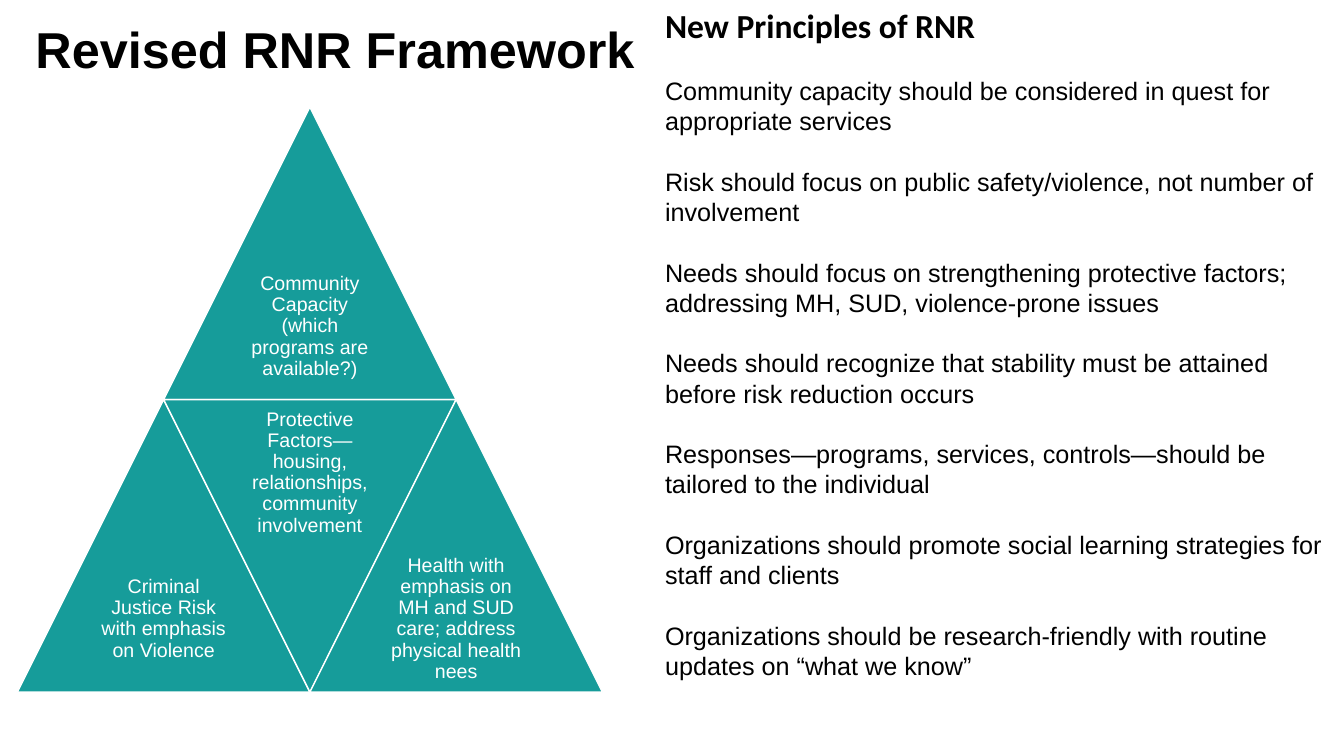
from dataclasses import dataclass

from pptx import Presentation
from pptx.dml.color import RGBColor
from pptx.enum.shapes import MSO_SHAPE
from pptx.enum.text import MSO_ANCHOR, MSO_AUTO_SIZE, PP_ALIGN
from pptx.util import Cm, Pt

TRIANGLE = MSO_SHAPE.ISOSCELES_TRIANGLE
LEFT, CENTER = PP_ALIGN.LEFT, PP_ALIGN.CENTER
TOP, MIDDLE = MSO_ANCHOR.TOP, MSO_ANCHOR.MIDDLE
NO_FIT, GROW = MSO_AUTO_SIZE.NONE, MSO_AUTO_SIZE.SHAPE_TO_FIT_TEXT


@dataclass(frozen=True)
class Theme:
    teal: RGBColor = RGBColor(0x16, 0x9C, 0x9A)
    white: RGBColor = RGBColor(0xFF, 0xFF, 0xFF)
    black: RGBColor = RGBColor(0x00, 0x00, 0x00)
    body_font: str = "Arial"
    heading_font: str = "Calibri"
    title: Pt = Pt(36)
    heading: Pt = Pt(24)
    body: Pt = Pt(18)
    label: Pt = Pt(14)
    principle_gap: Pt = Pt(21.6)


THEME = Theme()

# Column and row in half-side steps, upside down, label
TRIANGLES = [
    (1, 0, False, "Community Capacity (which programs are available?)"),
    (0, 1, False, "Criminal Justice Risk with emphasis on Violence"),
    (1, 1, True, "Protective Factors—housing, relationships, community involvement"),
    (2, 1, False, "Health with emphasis on MH and SUD care; address physical health nees"),
]

PRINCIPLES = [
    "Community capacity should be considered in quest for appropriate services",
    "Risk should focus on public safety/violence, not number of involvement",
    "Needs should focus on strengthening protective factors; addressing MH, SUD, "
    "violence-prone issues",
    "Needs should recognize that stability must be attained before risk reduction occurs",
    "Responses—programs, services, controls—should be tailored to the individual",
    "Organizations should promote social learning strategies for staff and clients",
    "Organizations should be research-friendly with routine updates on “what we know”",
]


def add_run(p, text, size, color, font=THEME.body_font, bold=False):
    r = p.add_run()
    r.text = text
    r.font.name, r.font.size, r.font.bold = font, size, bold
    r.font.color.rgb = color


def add_title(slide, left, top, width, height):
    sp = slide.shapes.title
    sp.left, sp.top, sp.width, sp.height = Cm(left), Cm(top), Cm(width), Cm(height)
    tf = sp.text_frame
    tf.vertical_anchor, tf.auto_size = TOP, NO_FIT
    p = tf.paragraphs[0]
    p.alignment, p.line_spacing = LEFT, 0.9
    add_run(p, "Revised RNR Framework", THEME.title, THEME.black, bold=True)


def add_label(shapes, left, top, size, text):
    tf = shapes.add_textbox(Cm(left), Cm(top), Cm(size), Cm(size)).text_frame
    tf.word_wrap, tf.vertical_anchor = True, MIDDLE
    tf.margin_left = tf.margin_right = tf.margin_top = tf.margin_bottom = Cm(0.15)
    p = tf.paragraphs[0]
    p.alignment, p.line_spacing = CENTER, 0.9
    add_run(p, text, THEME.label, THEME.white)


def add_pyramid(slide, left, top, size):
    """Fill a square box with four triangles, each half as large as the box."""
    shapes = slide.shapes.add_group_shape().shapes
    side = size / 2
    half = side / 2
    for col, row, inverted, text in TRIANGLES:
        x, y = left + col * half, top + row * side
        sp = shapes.add_shape(TRIANGLE, Cm(x), Cm(y), Cm(side), Cm(side))
        sp.rotation = 180 if inverted else 0
        sp.shadow.inherit = False
        sp.fill.solid()
        sp.fill.fore_color.rgb = THEME.teal
        sp.line.color.rgb = THEME.white
        sp.line.width = Pt(1)
        # The label sits in the wide half of its triangle
        add_label(shapes, x + half / 2, y if inverted else y + half, half, text)


def add_principles(slide, left, top, width, height):
    tf = slide.shapes.add_textbox(Cm(left), Cm(top), Cm(width), Cm(height)).text_frame
    tf.word_wrap, tf.auto_size = True, GROW
    add_run(tf.paragraphs[0], "New Principles of RNR", THEME.heading, THEME.black,
            THEME.heading_font, bold=True)
    for text in PRINCIPLES:
        p = tf.add_paragraph()
        p.space_before = THEME.principle_gap
        add_run(p, text, THEME.body, THEME.black)


def main():
    prs = Presentation()
    prs.slide_width, prs.slide_height = Cm(33.87), Cm(19.05)
    slide = prs.slides.add_slide(prs.slide_layouts[5])
    add_title(slide, 0.64, 0.5, 32.5, 2.82)
    add_pyramid(slide, 0.44, 2.7, 14.74)
    add_principles(slide, 16.51, 0, 17.1, 17.45)
    prs.save("out.pptx")


if __name__ == "__main__":
    main()
